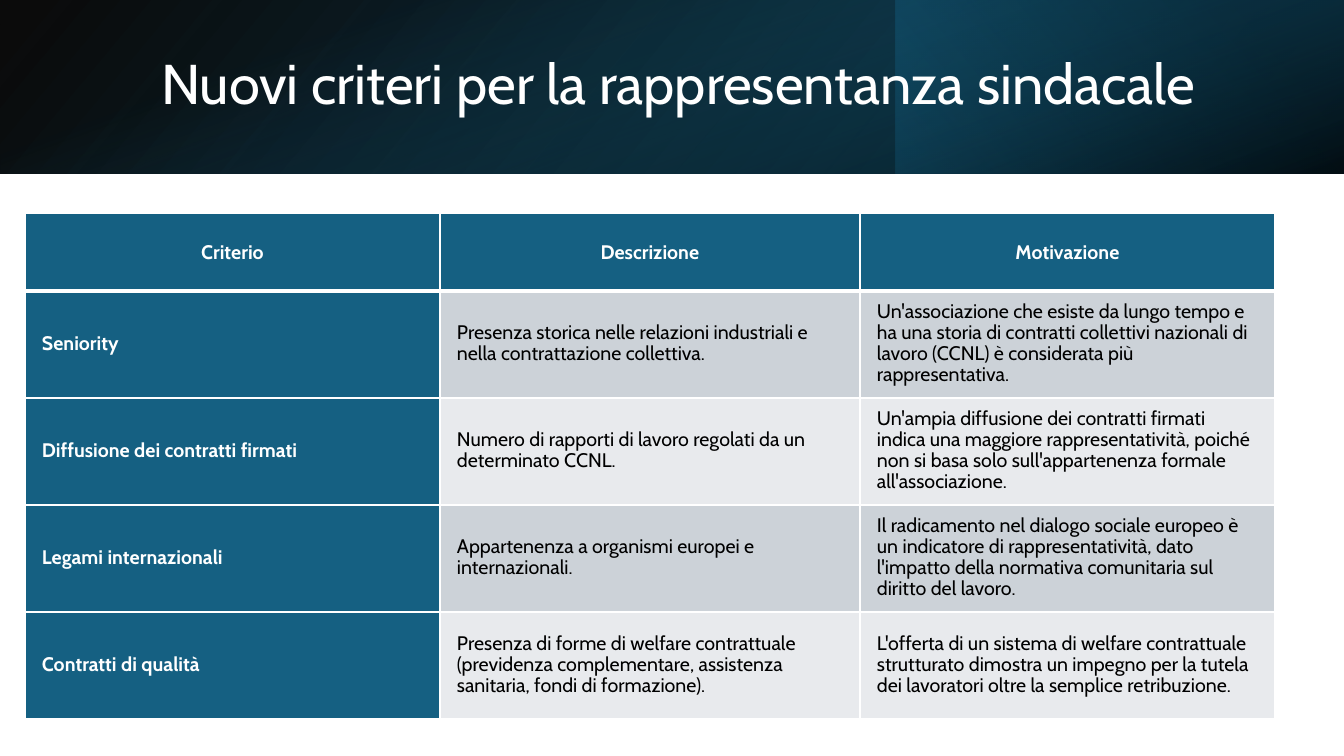
from pptx import Presentation
from pptx.dml.color import RGBColor
from pptx.enum.shapes import MSO_SHAPE
from pptx.enum.text import MSO_ANCHOR, MSO_AUTO_SIZE, PP_ALIGN
from pptx.oxml import parse_xml
from pptx.oxml.ns import nsdecls, qn
from pptx.util import Pt

TITLE = "Nuovi criteri per la rappresentanza sindacale"
HEADERS = ["Criterio", "Descrizione", "Motivazione"]
CRITERIA = [
    ("Seniority",
     "Presenza storica nelle relazioni industriali e nella contrattazione collettiva.",
     "Un'associazione che esiste da lungo tempo e ha una storia di contratti collettivi "
     "nazionali di lavoro (CCNL) è considerata più rappresentativa."),
    ("Diffusione dei contratti firmati",
     "Numero di rapporti di lavoro regolati da un determinato CCNL.",
     "Un'ampia diffusione dei contratti firmati indica una maggiore rappresentatività, "
     "poiché non si basa solo sull'appartenenza formale all'associazione."),
    ("Legami internazionali",
     "Appartenenza a organismi europei e internazionali.",
     "Il radicamento nel dialogo sociale europeo è un indicatore di rappresentatività, "
     "dato l'impatto della normativa comunitaria sul diritto del lavoro."),
    ("Contratti di qualità",
     "Presenza di forme di welfare contrattuale (previdenza complementare, assistenza "
     "sanitaria, fondi di formazione).",
     "L'offerta di un sistema di welfare contrattuale strutturato dimostra un impegno "
     "per la tutela dei lavoratori oltre la semplice retribuzione."),
]

COLORS = {
    "white": "FFFFFF", "black": "000000", "teal": "156082",
    "deep": "104862", "night": "0B3041", "odd": "CCD2D8", "even": "E8EAED",
}
FONT = "Cabin"
WIDTH, HEIGHT, BAND = 1344, 756, 174
TURNED = (WIDTH - BAND) // 2  # offset that lays a quarter-turned strip over the band

# box, rotation, flipped, gradient angle, stops (position %, colour, opacity %)
BAND_LAYERS = [
    ((0, 0, WIDTH, BAND), 0, True, 140, [(0, "black", 96), (100, "deep", 100)]),
    ((WIDTH * 2 // 3, 0, WIDTH // 3, BAND), 180, False, 320,
     [(19, "night", 68), (100, "teal", 79)]),
    ((TURNED, -TURNED, BAND, WIDTH), 90, False, 340,
     [(23, "teal", 0), (99, "black", 74)]),
]
TITLE_BOX = (151, 38, 1107, 97)
TABLE_LEFT, TABLE_TOP = 25, 213
COLUMN_WIDTHS = [415, 420, 415]
HEADER_HEIGHT, ROW_HEIGHT = 78, 107
SIDE_MARGIN, ROW_MARGIN = 17, 9


def px(length):
    return round(length * 12192000 / WIDTH)


def rgb(name):
    return RGBColor.from_string(COLORS[name])


def add_band_layer(slide, box, rotation, flipped, angle, stops):
    shape = slide.shapes.add_shape(MSO_SHAPE.RECTANGLE, *map(px, box))
    shape.rotation = rotation
    shape.line.fill.background()
    shape.shadow.inherit = False
    shape.fill.background()
    properties = shape.element.spPr
    if flipped:
        properties.find(qn("a:xfrm")).set("flipH", "1")
    stop_xml = "".join(
        f'<a:gs pos="{position * 1000}"><a:srgbClr val="{COLORS[color]}">'
        f'<a:alpha val="{opacity * 1000}"/></a:srgbClr></a:gs>'
        for position, color, opacity in stops)
    gradient = parse_xml(
        f'<a:gradFill {nsdecls("a")} rotWithShape="1"><a:gsLst>{stop_xml}</a:gsLst>'
        f'<a:lin ang="{angle * 60000}" scaled="0"/></a:gradFill>')
    properties.replace(properties.find(qn("a:noFill")), gradient)


def add_title(slide):
    title = slide.shapes.title
    title.left, title.top, title.width, title.height = map(px, TITLE_BOX)
    title.element.getparent().append(title.element)  # in front of the band
    frame = title.text_frame
    frame.text = TITLE
    frame.word_wrap = True
    frame.auto_size = MSO_AUTO_SIZE.NONE
    frame.vertical_anchor = MSO_ANCHOR.MIDDLE
    paragraph = frame.paragraphs[0]
    paragraph.alignment = PP_ALIGN.LEFT
    paragraph.line_spacing = 0.9
    set_font(paragraph, 40, "white")


def set_font(paragraph, size, color, bold=False):
    font = paragraph.font
    font.name, font.size, font.bold = FONT, Pt(size), bold
    font.color.rgb = rgb(color)


def set_borders(cell, top, bottom):
    widths = {"lnL": 1, "lnR": 1, "lnT": top, "lnB": bottom}
    properties = cell._tc.get_or_add_tcPr()
    for index, (side, points) in enumerate(widths.items()):
        properties.insert(index, parse_xml(
            f'<a:{side} {nsdecls("a")} w="{Pt(points)}"><a:solidFill>'
            f'<a:srgbClr val="{COLORS["white"]}"/></a:solidFill></a:{side}>'))


def fill_cell(cell, text, row, column):
    is_header = row == 0
    is_label = is_header or column == 0
    cell.text = text
    cell.vertical_anchor = MSO_ANCHOR.MIDDLE
    cell.margin_left = cell.margin_right = px(SIDE_MARGIN)
    cell.margin_top = cell.margin_bottom = px(SIDE_MARGIN if is_header else ROW_MARGIN)
    cell.fill.solid()
    cell.fill.fore_color.rgb = rgb("teal" if is_label else "odd" if row % 2 else "even")
    set_borders(cell, 3 if row == 1 else 1, 3 if is_header else 1)
    paragraph = cell.text_frame.paragraphs[0]
    paragraph.alignment = PP_ALIGN.CENTER if is_header else PP_ALIGN.LEFT
    paragraph.line_spacing = Pt(18 if is_header else 15)
    paragraph.space_after = Pt(8)
    set_font(paragraph, 14, "white" if is_label else "black", is_label)


def add_criteria_table(slide):
    rows = [HEADERS, *CRITERIA]
    heights = [HEADER_HEIGHT] + [ROW_HEIGHT] * len(CRITERIA)
    box = (TABLE_LEFT, TABLE_TOP, sum(COLUMN_WIDTHS), sum(heights))
    table = slide.shapes.add_table(len(rows), len(HEADERS), *map(px, box)).table
    for column, width in zip(table.columns, COLUMN_WIDTHS):
        column.width = px(width)
    for row, height in zip(table.rows, heights):
        row.height = px(height)
    for row, texts in enumerate(rows):
        for column, text in enumerate(texts):
            fill_cell(table.cell(row, column), text, row, column)


def main():
    presentation = Presentation()
    presentation.slide_width, presentation.slide_height = px(WIDTH), px(HEIGHT)
    slide = presentation.slides.add_slide(presentation.slide_layouts[5])
    for layer in BAND_LAYERS:
        add_band_layer(slide, *layer)
    add_title(slide)
    add_criteria_table(slide)
    presentation.save("out.pptx")


if __name__ == "__main__":
    main()
